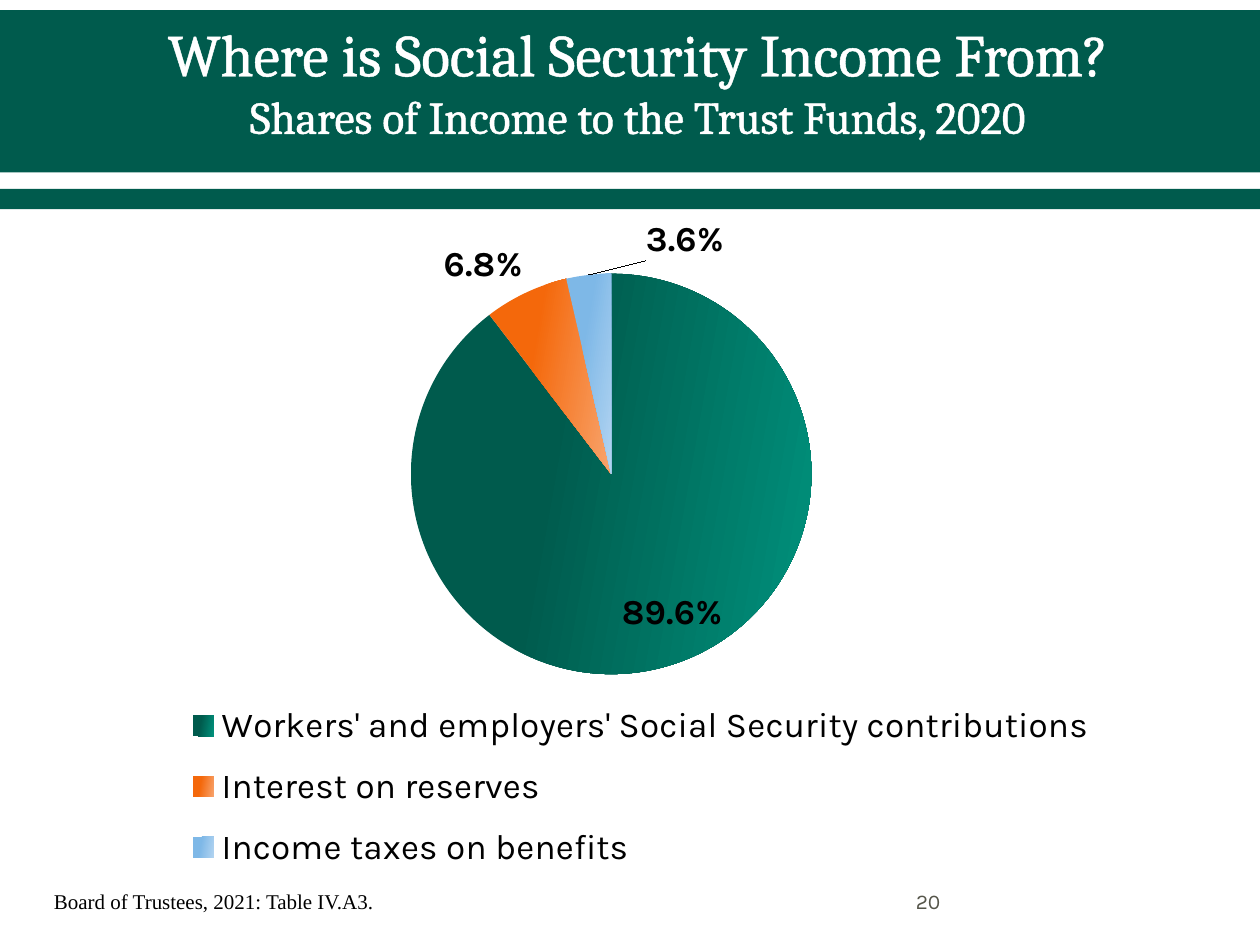
from dataclasses import dataclass

from lxml import etree
from pptx import Presentation
from pptx.chart.data import CategoryChartData
from pptx.dml.color import RGBColor
from pptx.enum.chart import XL_CHART_TYPE, XL_LABEL_POSITION, XL_LEGEND_POSITION
from pptx.enum.shapes import MSO_SHAPE
from pptx.enum.text import MSO_ANCHOR, PP_ALIGN
from pptx.oxml import parse_xml
from pptx.oxml.ns import nsdecls, qn
from pptx.util import Inches, Pt

RECTANGLE = MSO_SHAPE.RECTANGLE
MIDDLE = MSO_ANCHOR.MIDDLE
TOP = MSO_ANCHOR.TOP
CENTER = PP_ALIGN.CENTER
PIE = XL_CHART_TYPE.PIE
BEST_FIT = XL_LABEL_POSITION.BEST_FIT
LEGEND_BOTTOM = XL_LEGEND_POSITION.BOTTOM


@dataclass(frozen=True)
class Theme:
    green: str = "005B4D"
    white: str = "FFFFFF"
    black: str = "000000"
    gray: str = "55554A"
    title_font: str = "Cambria"
    chart_font: str = "Karla"
    source_font: str = "Times New Roman"
    title_size: int = 34
    subtitle_size: int = 26
    chart_size: int = 10
    label_size: int = 20
    footer_size: int = 12


THEME = Theme()

BANDS = [(0.08, 1.26), (1.5, 0.16), (0.11, 1.26)]  # top, height
SHARES = [  # category, share, dark end and light end of the slice gradient
    ("Workers' and employers' Social Security contributions", 0.896, THEME.green, "00927D"),
    ("Interest on reserves", 0.068, "F4680B", "F8A46D"),
    ("Income taxes on benefits", 0.036, "7EB8E7", "B2D4F1"),
]


def style_font(font, name, size, color, bold=False):
    font.name = name
    font.size = Pt(size)
    font.bold = bold
    font.color.rgb = RGBColor.from_string(color)


def add_band(slide, top, height):
    band = slide.shapes.add_shape(RECTANGLE, 0, Inches(top), Inches(10), Inches(height))
    band.shadow.inherit = False
    band.fill.solid()
    band.fill.fore_color.rgb = RGBColor.from_string(THEME.green)
    band.line.fill.background()


def set_title(slide, title, subtitle):
    shape = slide.shapes.title
    shape.left, shape.top = Inches(0.4), Inches(0.01)
    shape.width, shape.height = Inches(9.33), Inches(1.25)
    frame = shape.text_frame
    frame.text = f"{title}\v{subtitle}"
    frame.vertical_anchor = MIDDLE
    paragraph = frame.paragraphs[0]
    paragraph.alignment = CENTER
    for run, size in zip(paragraph.runs, (THEME.title_size, THEME.subtitle_size)):
        style_font(run.font, THEME.title_font, size, THEME.white)
        outline = parse_xml(
            f'<a:ln {nsdecls("a")} w="{Pt(1.1)}"><a:solidFill>'
            f'<a:srgbClr val="{THEME.white}"/></a:solidFill></a:ln>'
        )
        run.font._element.insert(0, outline)
    # The title stands in front of the bands.
    shape.element.getparent().append(shape.element)


def add_footer_text(slide, text, box, font_name, color, anchor=TOP, wrap=True):
    frame = slide.shapes.add_textbox(*map(Inches, box)).text_frame
    frame.word_wrap = wrap
    frame.vertical_anchor = anchor
    frame.text = text
    style_font(frame.paragraphs[0].runs[0].font, font_name, THEME.footer_size, color)


def set_layout(parent, index, **values):
    """Give a chart part a manual layout, in fractions of the chart."""
    for old in parent.findall(qn("c:layout")):
        parent.remove(old)
    layout = etree.Element(qn("c:layout"))
    manual = etree.SubElement(layout, qn("c:manualLayout"))
    for name, value in values.items():
        etree.SubElement(manual, qn(f"c:{name}"), val=str(value))
    parent.insert(index, layout)


def fill_slice(point, dark, light):
    """Keep the dark colour for the first 36 %, then fade to the light one."""
    stops = "".join(
        f'<a:gs pos="{percent * 1000}"><a:srgbClr val="{color}"/></a:gs>'
        for percent, color in ((0, dark), (36, dark), (100, light))
    )
    properties = point.format.fill._xPr
    properties.insert(0, parse_xml(
        f'<a:gradFill {nsdecls("a")} rotWithShape="1"><a:gsLst>{stops}</a:gsLst>'
        '<a:lin ang="600000" scaled="0"/></a:gradFill>'
    ))
    point.format.line.fill.background()


def format_labels(labels):
    labels.show_value = True
    labels.number_format = "0.0%"
    labels.number_format_is_linked = False
    labels.position = BEST_FIT
    style_font(labels.font, THEME.chart_font, THEME.label_size, THEME.black, bold=True)


def move_last_label(series):
    """Shift the label of the smallest slice to the right, on a leader line."""
    label = series.points[len(SHARES) - 1].data_label
    style_font(label.font, THEME.chart_font, THEME.label_size, THEME.black, bold=True)
    label.position = BEST_FIT
    element = series.data_labels._element.find(qn("c:dLbl"))
    set_layout(element, 1, x=0.13, y=-0.01)


def add_income_chart(slide):
    data = CategoryChartData(number_format="0.0%")
    data.categories = [category for category, *_ in SHARES]
    data.add_series("Series 1", [share for _, share, *_ in SHARES])
    box = map(Inches, (0.84, 1.65, 8.33, 5.5))
    chart = slide.shapes.add_chart(PIE, *box, data).chart
    style_font(chart.font, THEME.chart_font, THEME.chart_size, THEME.black)
    chart.has_title = False

    plot = chart.plots[0]
    plot.vary_by_categories = True
    series = plot.series[0]
    for index, (_, _, dark, light) in enumerate(SHARES):
        fill_slice(series.points[index], dark, light)
    format_labels(series.data_labels)
    move_last_label(series)
    set_layout(plot._element.getparent(), 0, layoutTarget="inner", xMode="edge",
               yMode="edge", x=0.275, y=0.095, w=0.413, h=0.578)

    chart.has_legend = True
    legend = chart.legend
    legend.position = LEGEND_BOTTOM
    legend.include_in_layout = False
    style_font(legend.font, THEME.chart_font, THEME.label_size, THEME.black)
    set_layout(legend._element, 1, xMode="edge", yMode="edge",
               x=0.07, y=0.69, w=0.88, h=0.29)


def main():
    presentation = Presentation()
    presentation.slide_width, presentation.slide_height = Inches(10), Inches(7.5)
    slide = presentation.slides.add_slide(presentation.slide_layouts[5])
    for top, height in BANDS:
        add_band(slide, top, height)
    set_title(slide, "Where is Social Security Income From?",
              "Shares of Income to the Trust Funds, 2020")
    add_footer_text(slide, "20", (7.17, 6.95, 2.33, 0.4),
                    THEME.chart_font, THEME.gray, anchor=MIDDLE)
    add_footer_text(slide, "Board of Trustees, 2021: Table IV.A3.", (0.33, 7, 2.77, 0.3),
                    THEME.source_font, THEME.black, wrap=False)
    add_income_chart(slide)
    presentation.save("out.pptx")


if __name__ == "__main__":
    main()
